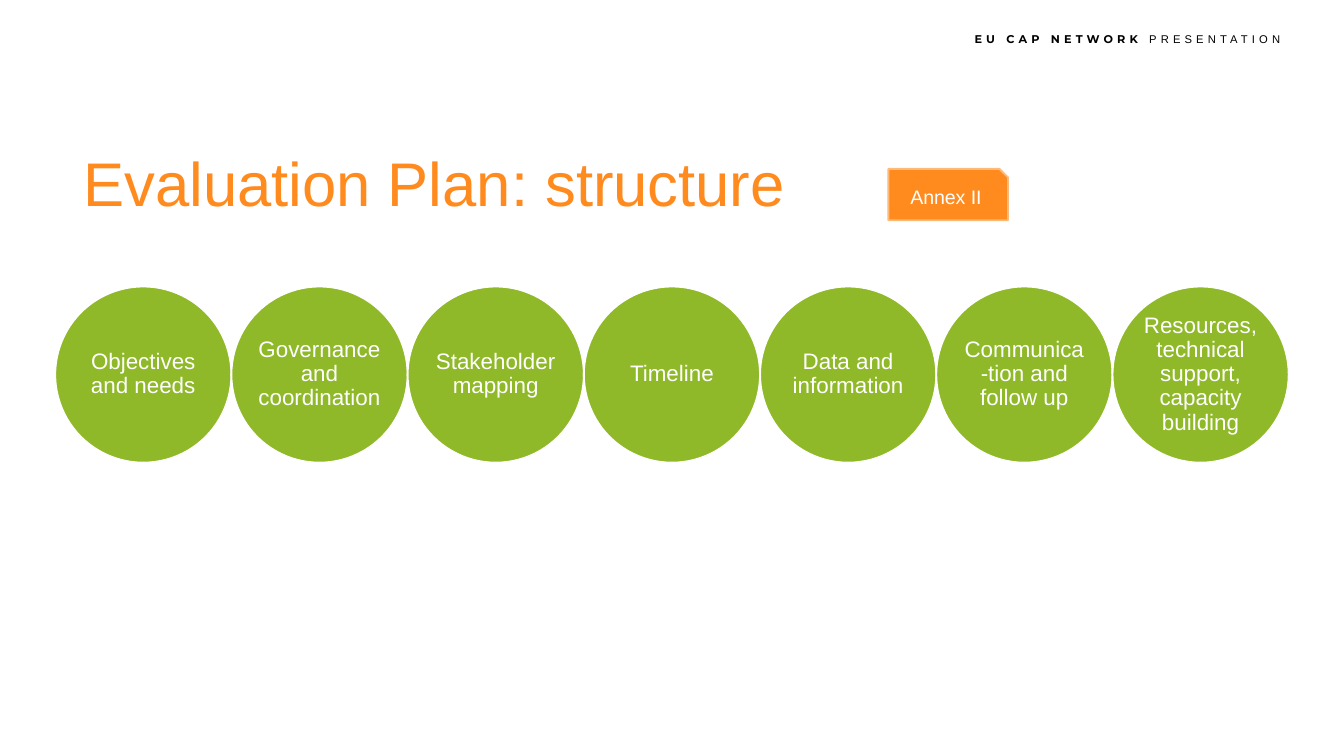
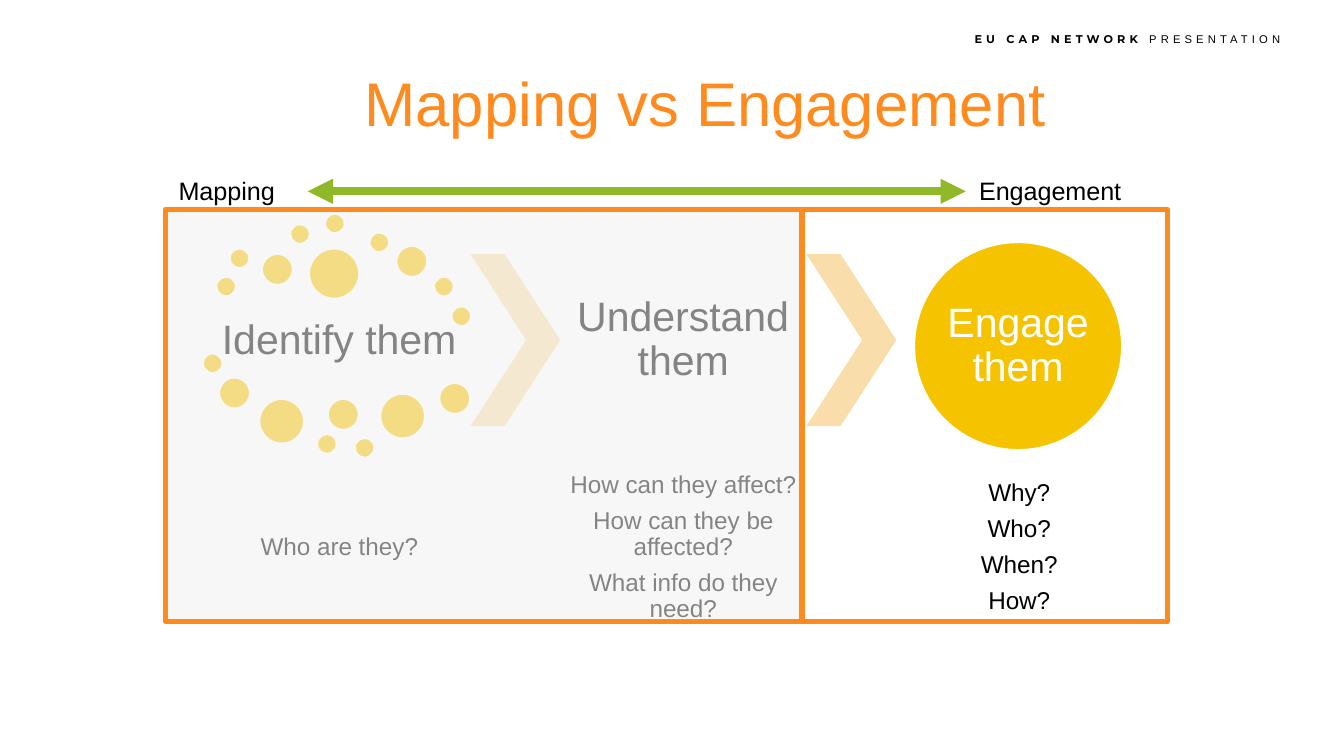
"""Build two slides on evaluation plan structure and stakeholder mapping."""

import dataclasses
import typing

import lxml.etree
import pptx
import pptx.dml.color
import pptx.enum.shapes
import pptx.enum.text
import pptx.oxml.ns
import pptx.presentation
import pptx.shapes.autoshape
import pptx.shapes.connector
import pptx.slide
import pptx.util

Pt = pptx.util.Pt
Preset = pptx.enum.shapes.MSO_SHAPE
Align = pptx.enum.text.PP_ALIGN
Anchor = pptx.enum.text.MSO_ANCHOR
AutoSize = pptx.enum.text.MSO_AUTO_SIZE
qn = pptx.oxml.ns.qn


@dataclasses.dataclass(frozen=True)
class Theme:
    orange: str = "FF8B1F"
    light_orange: str = "FFB979"
    pale_orange: str = "F9DEAB"
    green: str = "8FB928"
    yellow: str = "F5C300"
    veil: str = "F2F2F2"
    white: str = "FFFFFF"
    black: str = "000000"
    body_font: str = "Arial"
    brand_font: str = "Montserrat"
    header_size: float = 6
    title_size: float = 33
    tag_size: float = 10.5
    topic_size: float = 12
    heading_size: float = 22
    question_size: float = 13
    label_size: float = 13.5


THEME = Theme()


class Box(typing.NamedTuple):
    left: float
    top: float
    width: float
    height: float

    def lengths(self) -> tuple[pptx.util.Length, ...]:
        return tuple(Pt(value) for value in self)


class TextStyle(typing.NamedTuple):
    size: float
    color: str = THEME.black
    align: Align = Align.CENTER
    line_spacing: float | None = 0.9
    space_after: float = 0
    inset: float | None = None
    anchor: Anchor = Anchor.MIDDLE


class Dot(typing.NamedTuple):
    left: float
    top: float
    diameter: float


class Column(typing.NamedTuple):
    heading: str
    heading_box: Box
    questions: tuple[str, ...]
    questions_left: float


HEADER_BOX = Box(363, 13.7, 329.8, 14.4)
TITLE_HEIGHT = 78.5

TITLE = TextStyle(THEME.title_size, THEME.orange, Align.LEFT)
TAG = TextStyle(THEME.tag_size, THEME.white, line_spacing=None)
TOPIC = TextStyle(THEME.topic_size, THEME.white, space_after=4.9, inset=0)
HEADING = TextStyle(THEME.heading_size, space_after=9, inset=2.2)
ENGAGE = HEADING._replace(color=THEME.white, inset=0)
QUESTION = TextStyle(THEME.question_size, space_after=5.3, inset=1.4)
LABEL = TextStyle(THEME.label_size, align=Align.LEFT, line_spacing=None, anchor=Anchor.TOP)

TOPICS = (
    "Objectives and needs",
    "Governance and coordination",
    "Stakeholder mapping",
    "Timeline",
    "Data and information",
    "Communica-tion and follow up",
    "Resources, technical support, capacity building",
)
TOPIC_LEFT, TOPIC_TOP, TOPIC_DIAMETER = 29.6, 153.5, 94.4

SMALL, MEDIUM, LARGE, LARGEST = 10.5, 16.5, 23.8, 26.8
DOTS = (
    Dot(115.9, 148.3, SMALL),
    Dot(123.1, 133.2, SMALL),
    Dot(140.4, 136.1, MEDIUM),
    Dot(155.5, 120.2, SMALL),
    Dot(174.2, 114.5, SMALL),
    Dot(198, 124.6, SMALL),
    Dot(212.4, 131.8, MEDIUM),
    Dot(232.6, 148.3, SMALL),
    Dot(241.9, 164.2, SMALL),
    Dot(165.6, 133.2, LARGEST),
    Dot(108.7, 189.4, SMALL),
    Dot(117.4, 202.3, MEDIUM),
    Dot(139, 213.8, LARGE),
    Dot(169.9, 232.6, SMALL),
    Dot(175.7, 213.8, MEDIUM),
    Dot(190.1, 234.7, SMALL),
    Dot(203.8, 211, LARGE),
    Dot(235.4, 205.2, MEDIUM),
)

COLUMN_WIDTH = 131.6
QUESTIONS_TOP, QUESTIONS_HEIGHT = 252.7, 81.4
COLUMNS = (
    Column("Identify them", Box(115.9, 161.3, COLUMN_WIDTH, 43.2), ("Who are they?",), 115.9),
    Column(
        "Understand them",
        Box(300.2, 136.1, COLUMN_WIDTH, 92.2),
        ("How can they affect?", "How can they be affected?", "What info do they need?"),
        300.2,
    ),
    Column("Engage them", Box(489.8, 129.8, 111.3, 111.3), ("Why?", "Who?", "When?", "How?"), 480.2),
)
CHEVRON_LEFTS = (252, 432)
MAPPING_FRAME = Box(88.6, 112.3, 341.2, 220.7)
ENGAGEMENT_FRAME = Box(429.8, 112.3, 195.8, 220.7)
LABEL_TOP, LABEL_HEIGHT = 90.6, 23.8


def rgb(color: str) -> pptx.dml.color.RGBColor:
    return pptx.dml.color.RGBColor.from_string(color)


def write_text(shape: pptx.shapes.autoshape.Shape, lines: typing.Sequence[str], style: TextStyle) -> None:
    frame = shape.text_frame
    frame.text = "\n".join(lines)
    frame.word_wrap = True
    frame.auto_size = AutoSize.NONE
    frame.vertical_anchor = style.anchor
    if style.inset is not None:
        frame.margin_left = frame.margin_right = Pt(style.inset)
        frame.margin_top = frame.margin_bottom = Pt(style.inset)
    for paragraph in frame.paragraphs:
        paragraph.alignment = style.align
        paragraph.space_before = Pt(0)
        paragraph.space_after = Pt(style.space_after)
        if style.line_spacing is not None:
            paragraph.line_spacing = style.line_spacing
        paragraph.font.name = THEME.body_font
        paragraph.font.size = Pt(style.size)
        paragraph.font.color.rgb = rgb(style.color)


def add_text(
    slide: pptx.slide.Slide, box: Box, lines: typing.Sequence[str], style: TextStyle
) -> pptx.shapes.autoshape.Shape:
    shape = slide.shapes.add_textbox(*box.lengths())
    write_text(shape, lines, style)
    return shape


def add_preset(
    slide: pptx.slide.Slide,
    preset: Preset,
    box: Box,
    fill: str | None = None,
    line: str | None = None,
    line_width: float = 1,
) -> pptx.shapes.autoshape.Shape:
    shape = slide.shapes.add_shape(preset, *box.lengths())
    shape.shadow.inherit = False
    if fill is None:
        shape.fill.background()
    else:
        shape.fill.solid()
        shape.fill.fore_color.rgb = rgb(fill)
    if line is None:
        shape.line.fill.background()
    else:
        shape.line.color.rgb = rgb(line)
        shape.line.width = Pt(line_width)
    return shape


def add_circle(
    slide: pptx.slide.Slide, left: float, top: float, diameter: float, fill: str
) -> pptx.shapes.autoshape.Shape:
    return add_preset(slide, Preset.OVAL, Box(left, top, diameter, diameter), fill, THEME.white)


def set_opacity(shape: pptx.shapes.autoshape.Shape, percent: int) -> None:
    color = shape.element.spPr.find(qn("a:solidFill")).find(qn("a:srgbClr"))
    lxml.etree.SubElement(color, qn("a:alpha"), val=str(percent * 1000))


def add_double_arrow(
    slide: pptx.slide.Slide, start: pptx.shapes.autoshape.Shape, end: pptx.shapes.autoshape.Shape
) -> None:
    arrow = slide.shapes.add_connector(pptx.enum.shapes.MSO_CONNECTOR.STRAIGHT, 0, 0, 0, 0)
    arrow.begin_connect(start, 3)
    arrow.end_connect(end, 1)
    arrow.line.color.rgb = rgb(THEME.green)
    arrow.line.width = Pt(4.5)
    outline = arrow.line._get_or_add_ln()
    for end_name in ("a:headEnd", "a:tailEnd"):
        lxml.etree.SubElement(outline, qn(end_name), type="triangle")
    lxml.etree.SubElement(arrow.element.spPr, qn("a:effectLst"))


def add_header(slide: pptx.slide.Slide) -> None:
    shape = slide.shapes.add_textbox(*HEADER_BOX.lengths())
    shape.text_frame.word_wrap = True
    paragraph = shape.text_frame.paragraphs[0]
    paragraph.alignment = Align.RIGHT
    paragraph.font.size = Pt(THEME.header_size)
    paragraph.font.color.rgb = rgb(THEME.black)
    parts = (("EU CAP NETWORK ", THEME.brand_font, True), ("PRESENTATION", THEME.body_font, False))
    for text, font_name, bold in parts:
        run = paragraph.add_run()
        run.text = text
        run.font.name = font_name
        run.font.bold = bold
        run._r.get_or_add_rPr().set("spc", "220")


def add_titled_slide(
    presentation: pptx.presentation.Presentation, title: str, left: float, top: float, width: float
) -> pptx.slide.Slide:
    slide = presentation.slides.add_slide(presentation.slide_layouts[5])
    shape = slide.shapes.title
    box = Box(left, top, width, TITLE_HEIGHT)
    shape.left, shape.top, shape.width, shape.height = box.lengths()
    write_text(shape, (title,), TITLE)
    add_header(slide)
    return slide


def build_structure_slide(presentation: pptx.presentation.Presentation) -> None:
    slide = add_titled_slide(presentation, "Evaluation Plan: structure", 37.5, 60.5, 424)
    tag_box = Box(475.9, 90.5, 64.1, 27.5)
    tag = add_preset(slide, Preset.SNIP_1_RECTANGLE, tag_box, THEME.orange, THEME.light_orange)
    write_text(tag, ("Annex II",), TAG)
    for index, topic in enumerate(TOPICS):
        left = TOPIC_LEFT + index * TOPIC_DIAMETER
        circle = add_circle(slide, left, TOPIC_TOP, TOPIC_DIAMETER, THEME.green)
        write_text(circle, (topic,), TOPIC)


def build_mapping_slide(presentation: pptx.presentation.Presentation) -> None:
    slide = add_titled_slide(presentation, "Mapping vs Engagement", 188, 18, 409.7)
    for dot in DOTS:
        add_circle(slide, *dot, THEME.yellow)
    for left in CHEVRON_LEFTS:
        chevron = add_preset(slide, Preset.CHEVRON, Box(left, 136.1, 48.2, 92.2), THEME.pale_orange)
        chevron.adjustments[0] = 0.62
    *mapping_columns, engagement = COLUMNS
    for column in mapping_columns:
        add_text(slide, column.heading_box, (column.heading,), HEADING)
    left, top, diameter, _ = engagement.heading_box
    write_text(add_circle(slide, left, top, diameter, THEME.yellow), (engagement.heading,), ENGAGE)
    for column in COLUMNS:
        box = Box(column.questions_left, QUESTIONS_TOP, COLUMN_WIDTH, QUESTIONS_HEIGHT)
        add_text(slide, box, column.questions, QUESTION)
    veil = add_preset(slide, Preset.RECTANGLE, MAPPING_FRAME, THEME.veil, THEME.orange, 3)
    set_opacity(veil, 55)
    mapping_label = add_text(slide, Box(88.6, LABEL_TOP, 76.3, LABEL_HEIGHT), ("Mapping",), LABEL)
    engagement_label = add_text(slide, Box(517.4, LABEL_TOP, 93, LABEL_HEIGHT), ("Engagement",), LABEL)
    add_double_arrow(slide, mapping_label, engagement_label)
    add_preset(slide, Preset.RECTANGLE, ENGAGEMENT_FRAME, line=THEME.orange, line_width=3)


def main() -> None:
    presentation = pptx.Presentation()
    presentation.slide_width, presentation.slide_height = Pt(720), Pt(405)
    build_structure_slide(presentation)
    build_mapping_slide(presentation)
    presentation.save("out.pptx")


if __name__ == "__main__":
    main()
